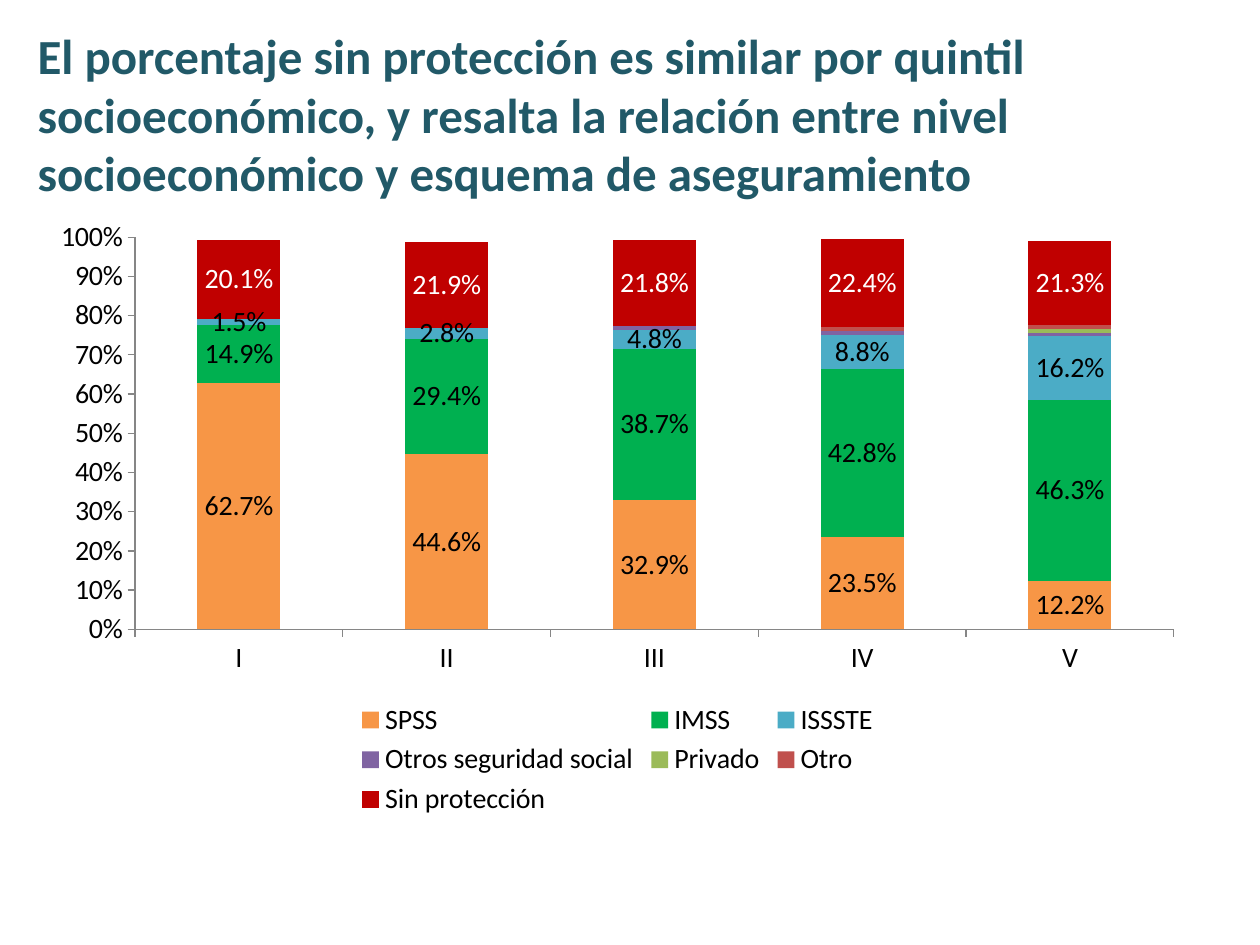
from dataclasses import dataclass

from pptx import Presentation
from pptx.chart.data import CategoryChartData as Data
from pptx.dml.color import RGBColor as Rgb
from pptx.enum.chart import XL_CHART_TYPE as Kind
from pptx.enum.chart import XL_LABEL_POSITION as Spot
from pptx.enum.chart import XL_LEGEND_POSITION as Side
from pptx.enum.chart import XL_TICK_MARK as Tick
from pptx.enum.text import MSO_ANCHOR as Anchor
from pptx.util import Inches, Pt


@dataclass(frozen=True)
class Theme:
    face: str = "Calibri"
    head: str = "215968"
    ink: str = "000000"
    pale: str = "FFFFFF"
    axis: str = "868686"
    big: int = 28
    base: int = 16


THEME = Theme()
TITLE = ("El porcentaje sin protección es similar por quintil socioeconómico, "
         "y resalta la relación entre nivel socioeconómico y esquema de aseguramiento")
CATS = ["I", "II", "III", "IV", "V"]
ROWS = [
    ("SPSS", [0.627, 0.446, 0.329, 0.235, 0.122], "F79646", THEME.ink),
    ("IMSS", [0.149, 0.294, 0.387, 0.428, 0.463], "00B050", THEME.ink),
    ("ISSSTE", [0.015, 0.028, 0.048, 0.088, 0.162], "4BACC6", THEME.ink),
    ("Otros seguridad social", [0, 0, 0.01, 0.01, 0.01], "8064A2", None),
    ("Privado", [0, 0, 0, 0, 0.01], "9BBB59", None),
    ("Otro", [0, 0, 0, 0.01, 0.01], "C0504D", None),
    ("Sin protección", [0.201, 0.219, 0.218, 0.224, 0.213], "C00000", THEME.pale),
]


def style(font, size, color, bold=False):
    font.name = THEME.face
    font.size = Pt(size)
    font.bold = bold
    font.color.rgb = Rgb.from_string(color)


def add_title(slide, box):
    frame = slide.shapes.add_textbox(*box).text_frame
    frame.word_wrap = True
    frame.vertical_anchor = Anchor.MIDDLE
    para = frame.paragraphs[0]
    para.text = TITLE
    style(para.font, THEME.big, THEME.head, True)


def add_bars(slide, box):
    data = Data(number_format="0.0%")
    data.categories = CATS
    for name, vals, _, _ in ROWS:
        data.add_series(name, vals)
    chart = slide.shapes.add_chart(Kind.COLUMN_STACKED, *box, data).chart
    style(chart.font, THEME.base, THEME.ink)
    chart.has_title = False
    chart.has_legend = True
    chart.legend.position = Side.BOTTOM
    chart.legend.include_in_layout = False

    for axis in (chart.category_axis, chart.value_axis):
        axis.has_major_gridlines = False
        axis.major_tick_mark = Tick.OUTSIDE
        axis.minor_tick_mark = Tick.NONE
        axis.format.line.color.rgb = Rgb.from_string(THEME.axis)
    scale = chart.value_axis
    scale.minimum_scale, scale.maximum_scale, scale.major_unit = 0, 1, 0.1
    scale.tick_labels.number_format = "0%"
    scale.tick_labels.number_format_is_linked = False

    plot = chart.plots[0]
    plot.gap_width, plot.overlap = 150, 100
    plot.vary_by_categories = False
    for bars, (_, _, fill, ink) in zip(plot.series, ROWS):
        bars.format.fill.solid()
        bars.format.fill.fore_color.rgb = Rgb.from_string(fill)
        if ink:
            tags = bars.data_labels
            tags.show_value = True
            tags.position = Spot.CENTER
            tags.number_format = "0.0%"
            tags.number_format_is_linked = False
            style(tags.font, THEME.base, ink)


def main():
    deck = Presentation()
    deck.slide_width, deck.slide_height = Inches(10), Inches(7.5)
    wide, high = deck.slide_width, deck.slide_height
    slide = deck.slides.add_slide(deck.slide_layouts[6])

    def area(left, top, width, height):
        return [int(n) for n in (left * wide, top * high, width * wide, height * high)]

    add_title(slide, area(0.02, 0.05, 0.9, 0.14))
    add_bars(slide, area(0.03, 0.22, 0.92, 0.65))
    deck.save("out.pptx")


if __name__ == "__main__":
    main()
